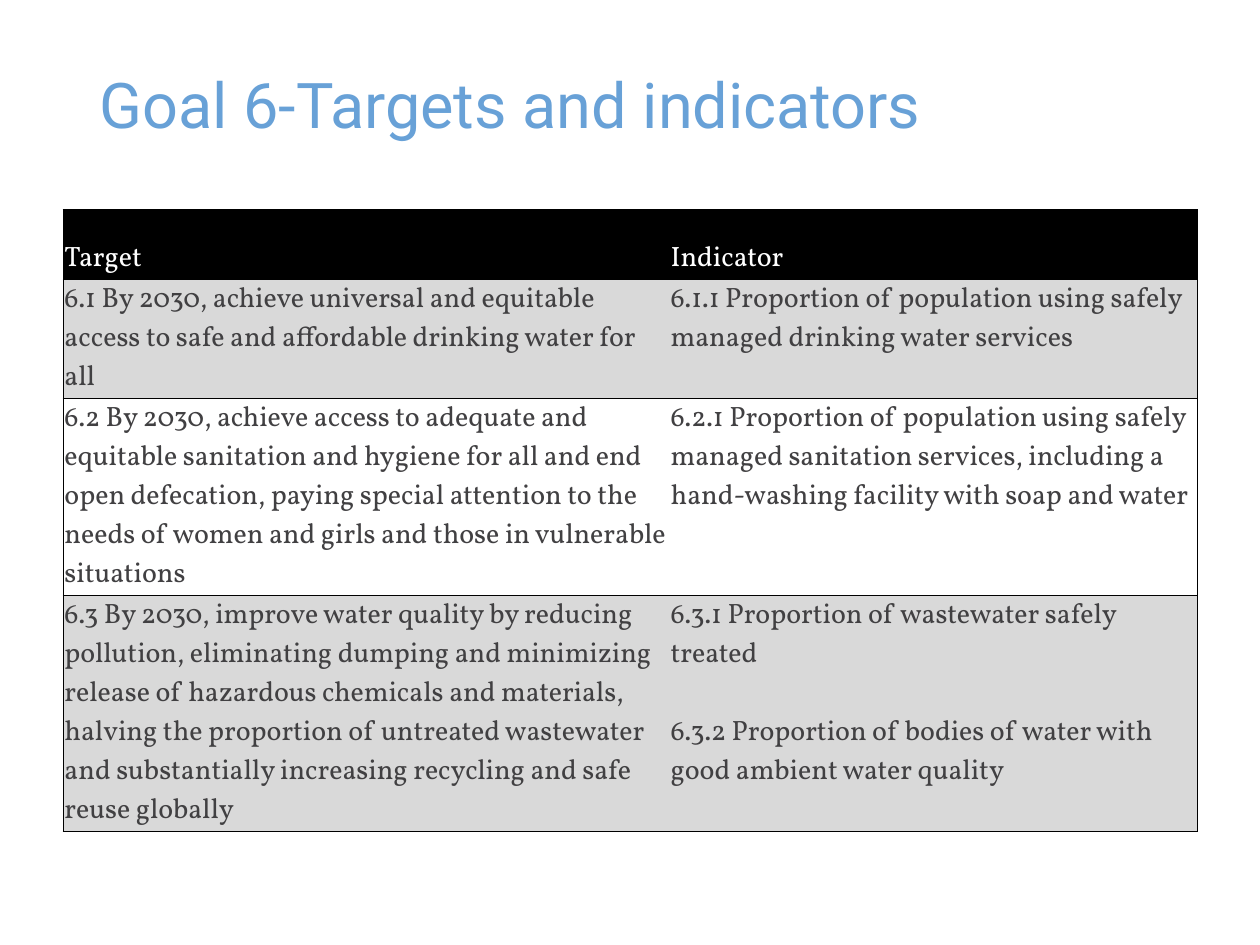
from dataclasses import dataclass

from lxml.etree import SubElement
from pptx import Presentation
from pptx.dml.color import RGBColor
from pptx.enum.text import MSO_ANCHOR, MSO_AUTO_SIZE, PP_ALIGN
from pptx.oxml.ns import qn
from pptx.util import Cm, Pt


@dataclass(frozen=True)
class Theme:
    title_font: str = "Roboto"
    body_font: str = "Vollkorn"
    title_size: float = 36
    body_size: float = 16
    title: str = "68A1D7"
    header_text: str = "FFFFFF"
    header_fill: str = "000000"
    text: str = "414042"
    band: str = "D9D9D9"
    border: str = "000000"
    border_width: float = 0.5
    paragraph_gap: float = 22.3


THEME = Theme()

HEADER = (["Target"], ["Indicator"])
GOALS = [
    (["6.1 By 2030, achieve universal and equitable access to safe and "
      "affordable drinking water for all"],
     ["6.1.1 Proportion of population using safely managed drinking water "
      "services"]),
    (["6.2 By 2030, achieve access to adequate and equitable sanitation and "
      "hygiene for all and end open defecation, paying special attention to "
      "the needs of women and girls and those in vulnerable situations"],
     ["6.2.1 Proportion of population using safely managed sanitation "
      "services, including a hand-washing facility with soap and water"]),
    (["6.3 By 2030, improve water quality by reducing pollution, eliminating "
      "dumping and minimizing release of hazardous chemicals and materials, "
      "halving the proportion of untreated wastewater and substantially "
      "increasing recycling and safe reuse globally"],
     ["6.3.1 Proportion of wastewater safely treated",
      "6.3.2 Proportion of bodies of water with good ambient water quality"]),
]
COL_WIDTHS = (12.22, 10.64)
ROW_HEIGHTS = (1.4, 2.38, 3.96, 4.75)


def add_run(p, text, font, size, color):
    r = p.add_run()
    r.text = text
    r.font.name = font
    r.font.size = Pt(size)
    r.font.color.rgb = RGBColor.from_string(color)


def set_borders(cell, visible):
    """Draw the sides named in visible (L, R, T, B) and clear the others."""
    tc_pr = cell._tc.get_or_add_tcPr()
    for i, side in enumerate("LRTB"):
        ln = SubElement(tc_pr, qn(f"a:ln{side}"), w=str(Pt(THEME.border_width)))
        if side in visible:
            fill = SubElement(ln, qn("a:solidFill"))
            SubElement(fill, qn("a:srgbClr"), val=THEME.border)
        else:
            SubElement(ln, qn("a:noFill"))
        tc_pr.insert(i, ln)


def add_title(s, text, left, top, width, height):
    title = s.shapes.title
    title.left, title.top = Cm(left), Cm(top)
    title.width, title.height = Cm(width), Cm(height)
    tf = title.text_frame
    tf.auto_size = MSO_AUTO_SIZE.NONE
    tf.vertical_anchor = MSO_ANCHOR.BOTTOM
    p = tf.paragraphs[0]
    p.alignment = PP_ALIGN.LEFT
    p.line_spacing = 0.9
    add_run(p, text, THEME.title_font, THEME.title_size, THEME.title)


def fill_cell(cell, paragraphs, color, fill, anchor):
    cell.margin_left = cell.margin_right = cell.margin_top = Cm(0.03)
    cell.margin_bottom = 0
    cell.vertical_anchor = anchor
    if fill:
        cell.fill.solid()
        cell.fill.fore_color.rgb = RGBColor.from_string(fill)
    else:
        cell.fill.background()
    tf = cell.text_frame
    for i, text in enumerate(paragraphs):
        p = tf.add_paragraph() if i else tf.paragraphs[0]
        if i:
            p.space_before = Pt(THEME.paragraph_gap)
        add_run(p, text, THEME.body_font, THEME.body_size, color)


def add_goal_table(s, left, top):
    rows = [HEADER, *GOALS]
    table = s.shapes.add_table(
        len(rows), len(COL_WIDTHS), Cm(left), Cm(top),
        Cm(sum(COL_WIDTHS)), Cm(sum(ROW_HEIGHTS))).table
    for col, width in zip(table.columns, COL_WIDTHS):
        col.width = Cm(width)
    for row, height in zip(table.rows, ROW_HEIGHTS):
        row.height = Cm(height)
    for i, texts in enumerate(rows):
        if i == 0:
            look = THEME.header_text, THEME.header_fill, MSO_ANCHOR.BOTTOM
        else:
            look = THEME.text, THEME.band if i % 2 else None, MSO_ANCHOR.TOP
        for j, paragraphs in enumerate(texts):
            cell = table.cell(i, j)
            fill_cell(cell, paragraphs, *look)
            set_borders(cell, "TB" + "LR"[j])


def main():
    prs = Presentation()
    prs.slide_width, prs.slide_height = Cm(25.4), Cm(19.05)
    s = prs.slides.add_slide(prs.slide_layouts.get_by_name("Title Only"))
    add_title(s, "Goal 6-Targets and indicators", 1.75, 1.35, 19.05, 1.65)
    add_goal_table(s, 1.27, 4.23)
    prs.save("out.pptx")


if __name__ == "__main__":
    main()
